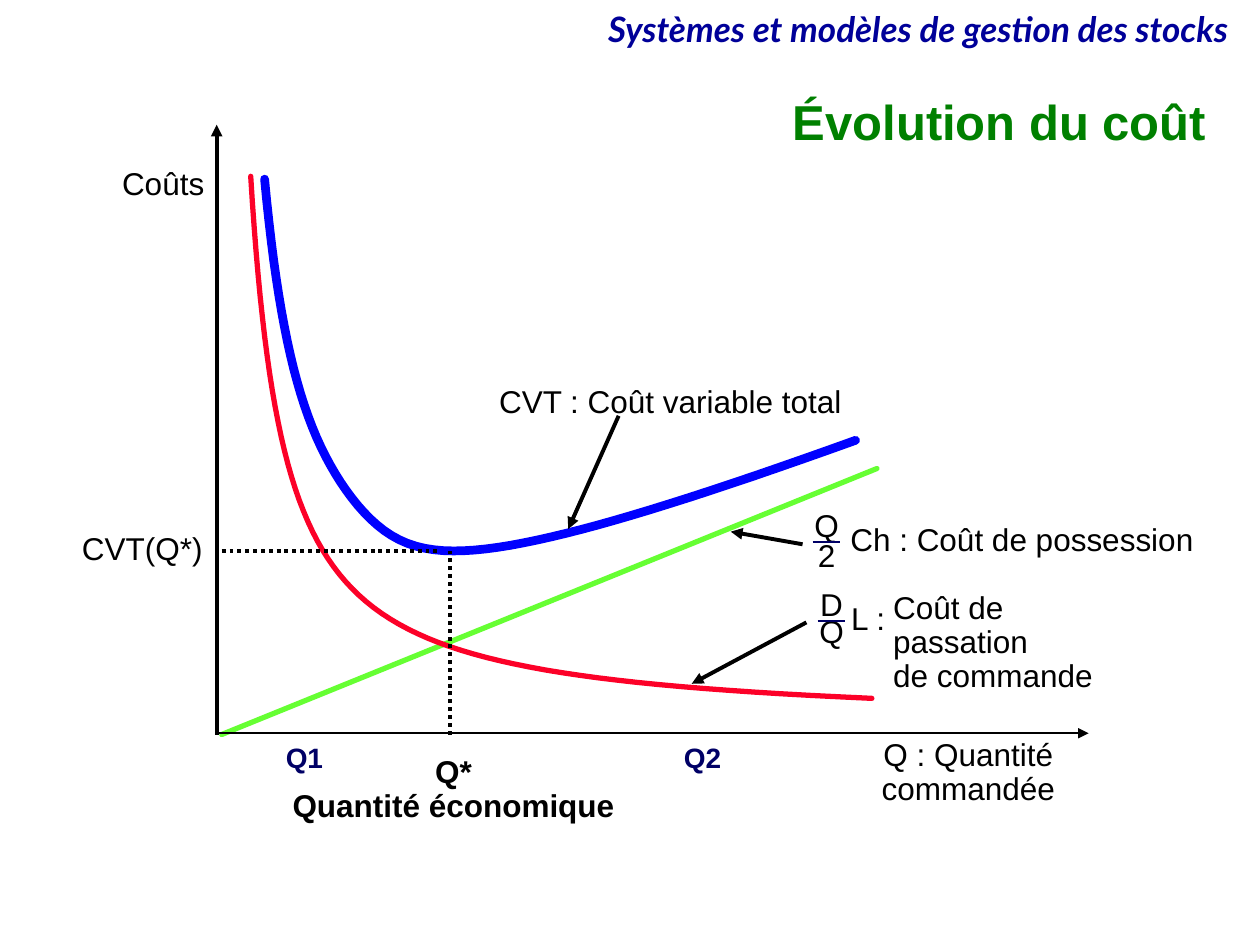
from lxml import etree
from pptx import Presentation
from pptx.dml.color import RGBColor
from pptx.enum import dml, shapes, text
from pptx.oxml.ns import qn
from pptx.util import Inches, Pt

BLACK = RGBColor(0x00, 0x00, 0x00)
HEADER_BLUE = RGBColor(0x00, 0x00, 0x99)
TITLE_GREEN = RGBColor(0x00, 0x80, 0x00)
NAVY = RGBColor(0x00, 0x00, 0x66)
HOLDING_GREEN = RGBColor(0x66, 0xFF, 0x33)
ORDER_RED = RGBColor(0xFC, 0x01, 0x28)
TOTAL_BLUE = RGBColor(0x00, 0x00, 0xFF)

LEFT, CENTER, RIGHT = text.PP_ALIGN.LEFT, text.PP_ALIGN.CENTER, text.PP_ALIGN.RIGHT
BODY = {"name": "Arial", "size": Pt(18), "bold": False, "italic": False}
LINE_HEIGHT = 0.37

# Chart frame in inches: left, top, width, height
FRAME = (1.72, 0.99, 6.92, 4.84)
# Order quantity and cost at the optimum, in inches from the origin
BEST_QUANTITY, BEST_COST = 1.85, 1.46


def holding_cost(quantity):
    """Q/2 * Ch: grows in proportion to the quantity."""
    return 0.406 * (quantity - 0.04)


def ordering_cost(quantity):
    """D/Q * L: falls as the inverse of the quantity."""
    return 1.18 / quantity + 0.06


def total_cost(quantity):
    """Sum of both costs, lifted at small quantities to part the two curves."""
    lift = 0.42 / (quantity * (1 + (quantity / 1.3) ** 6))
    return holding_cost(quantity) + ordering_cost(quantity) + lift


# Cost, first and last quantity, number of segments, colour, line width
CURVES = (
    (holding_cost, 0.04, 5.24, 1, HOLDING_GREEN, 3),
    (ordering_cost, 0.27, 5.2, 60, ORDER_RED, 3),
    (total_cost, 0.38, 5.07, 60, TOTAL_BLUE, 5),
)


def on_slide(frame, quantity, cost):
    """Turn chart values into a place on the slide."""
    left, top, _, height = frame
    return left + quantity, top + height - cost


def label(parent, box, wording, align=CENTER, wrap=False, color=BLACK, spacing=0.9, **font):
    """Put a text box at box; each line of wording is a paragraph."""
    frame = parent.add_textbox(*map(Inches, box)).text_frame
    frame.word_wrap = wrap
    frame.auto_size = text.MSO_AUTO_SIZE.SHAPE_TO_FIT_TEXT
    frame.text = wording
    for paragraph in frame.paragraphs:
        paragraph.alignment = align
        paragraph.line_spacing = spacing
        for attribute, value in {**BODY, **font}.items():
            setattr(paragraph.font, attribute, value)
        paragraph.font.color.rgb = color


def rule(parent, start, end, width=2.25, color=BLACK, arrow=False, dotted=False):
    """Draw a straight line, with an arrowhead at its end if asked."""
    line = parent.add_connector(shapes.MSO_CONNECTOR.STRAIGHT, *map(Inches, start + end))
    line.line.width = Pt(width)
    line.line.color.rgb = color
    if dotted:
        line.line.dash_style = dml.MSO_LINE.ROUND_DOT
    if arrow:
        etree.SubElement(line.line._get_or_add_ln(), qn("a:tailEnd"), type="triangle")
    etree.SubElement(line._element.spPr, qn("a:effectLst"))


def curve(parent, frame, cost, first, last, segments, color, width):
    """Plot cost over quantities that grow by a constant ratio, denser where it is steep."""
    ratio = (last / first) ** (1 / segments)
    quantities = [first * ratio ** step for step in range(segments + 1)]
    start, *rest = [tuple(map(Inches, on_slide(frame, quantity, cost(quantity))))
                    for quantity in quantities]
    builder = parent.build_freeform(*start)
    builder.add_line_segments(rest, close=False)
    outline = builder.convert_to_shape()
    outline.shadow.inherit = False
    outline.fill.background()
    outline.line.color.rgb = color
    outline.line.width = Pt(width)
    ln = outline.line._get_or_add_ln()
    ln.set("cap", "rnd")
    etree.SubElement(ln, qn("a:round"))


def fraction(parent, center, bar_top, numerator, denominator, drop):
    """Stack two symbols around a bar, as one group; drop is the step between them."""
    group = parent.add_group_shape().shapes
    box_width, bar_width = 0.39, 0.22
    top = bar_top - 0.3
    for box_top, symbol in ((top, numerator), (top + drop, denominator)):
        label(group, (center - box_width / 2, box_top, box_width, LINE_HEIGHT), symbol)
    rule(group, (center - bar_width / 2, bar_top), (center + bar_width / 2, bar_top), 1, NAVY)


def heading(parent, left, top, width):
    label(parent, (left, top, width, 0.4), "Systèmes et modèles de gestion des stocks",
          RIGHT, True, HEADER_BLUE, name="Lato", size=Pt(20), bold=True, italic=True)
    label(parent, (1.75, top + 0.68, 7.92, 0.5), "Évolution du coût",
          RIGHT, True, TITLE_GREEN, size=Pt(28), bold=True)


def cost_chart(parent, frame):
    left, top, width, height = frame
    bottom = top + height
    for cost_curve in CURVES:
        curve(parent, frame, *cost_curve)
    # Guides from the optimum to both axes
    best_x, best_y = on_slide(frame, BEST_QUANTITY, BEST_COST)
    rule(parent, (left + 0.04, best_y), (best_x - 0.08, best_y), dotted=True)
    rule(parent, (best_x, bottom), (best_x, best_y), dotted=True)
    # Axes
    rule(parent, (left, bottom), (left, top), arrow=True)
    rule(parent, (left, bottom - 0.01), (left + width, bottom - 0.01), 1, arrow=True)


def axis_labels(parent, frame):
    left, top, _, height = frame
    bottom = top + height
    # Cost axis
    label(parent, (left - 0.85, top + 0.3, 0.85, LINE_HEIGHT), "Coûts")
    label(parent, (left - 1.17, bottom - BEST_COST - 0.19, 1.16, LINE_HEIGHT), "CVT(Q*)")
    # Quantity axis
    label(parent, (6.19, bottom - 0.01, 2.99, LINE_HEIGHT), "Q : Quantité\vcommandée")
    label(parent, (2.15, bottom + 0.12, 2.9, 0.64), "Q*\nQuantité économique", bold=True)
    for offset, quantity in ((0.45, "Q1"), (3.61, "Q2")):
        label(parent, (left + offset, bottom, 0.5, LINE_HEIGHT), quantity, LEFT, color=NAVY,
              spacing=1.0, size=Pt(16), bold=True)


def curve_labels(parent, frame):
    # Total variable cost
    label(parent, (3.86, 3.02, 2.92, LINE_HEIGHT), "CVT : Coût variable total")
    # Holding cost
    fraction(parent, 6.56, 4.3, "Q", "2", drop=0.24)
    label(parent, (6.65, 4.11, 2.95, LINE_HEIGHT), "Ch : Coût de possession", LEFT)
    # Ordering cost
    fraction(parent, 6.6, 4.93, "D", "Q", drop=0.21)
    label(parent, (6.65, 4.74, 0.48, LINE_HEIGHT), "L :")
    label(parent, (6.99, 4.65, 2.21, 0.64), "Coût de\vpassation\nde commande", LEFT)
    # Pointers: label end, curve, quantity pointed at, gap above the curve
    for start, cost, quantity, gap in (((6.37, 4.32), holding_cost, 4.08, -0.03),
                                       ((6.4, 4.94), ordering_cost, 3.77, 0.03),
                                       ((4.91, 3.3), total_cost, 2.79, 0.03)):
        rule(parent, start, on_slide(frame, quantity, cost(quantity) + gap), arrow=True)


def main():
    deck = Presentation()
    deck.slide_width, deck.slide_height = Inches(10), Inches(7.5)
    parts = deck.slides.add_slide(deck.slide_layouts[6]).shapes
    heading(parts, 3.58, 0.05, 6.27)
    for region in (cost_chart, axis_labels, curve_labels):
        region(parts, FRAME)
    deck.save("out.pptx")


if __name__ == "__main__":
    main()
